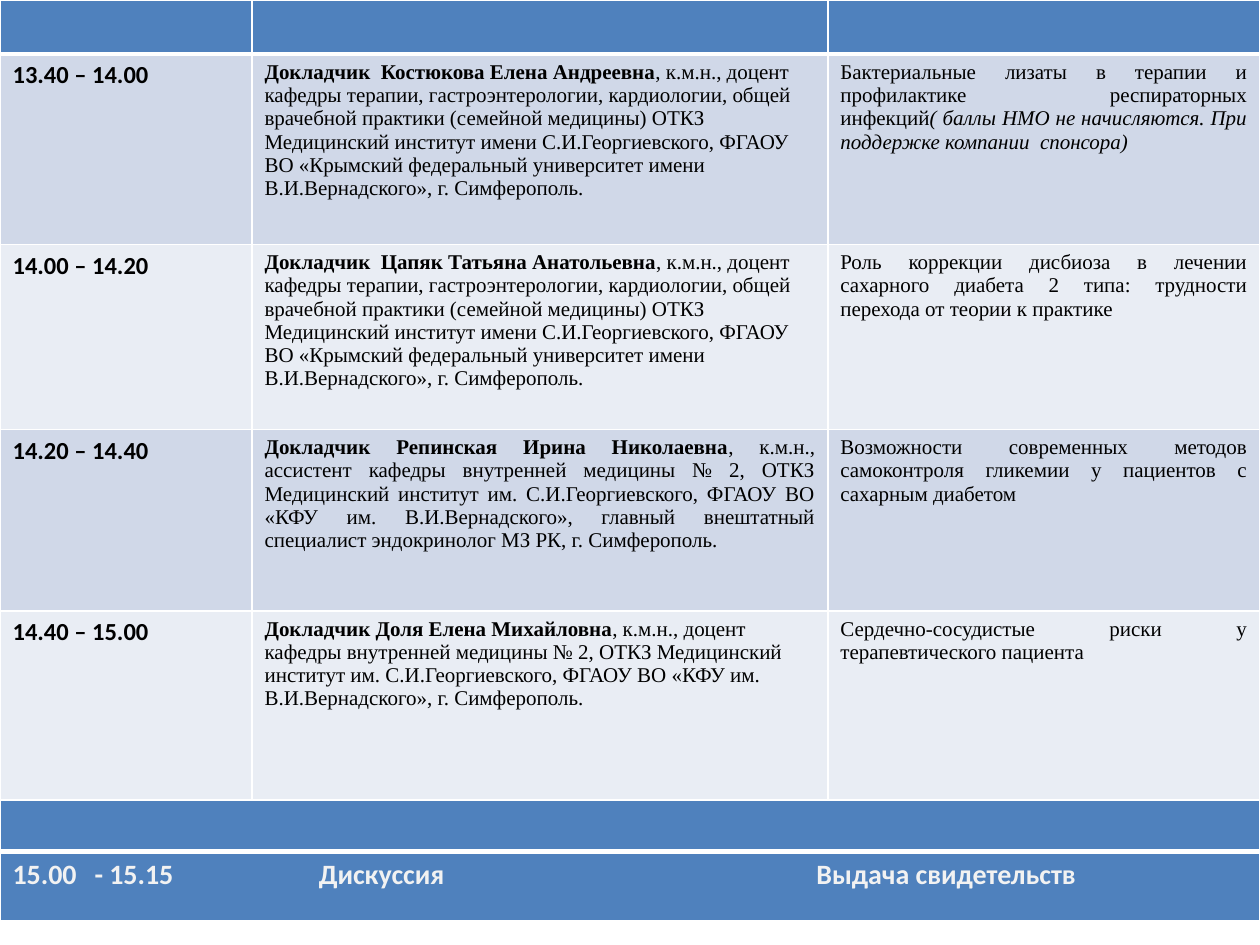
from lxml.etree import SubElement
from pptx import Presentation
from pptx.dml.color import RGBColor
from pptx.enum.text import PP_ALIGN
from pptx.oxml import parse_xml
from pptx.oxml.ns import nsdecls, qn
from pptx.util import Emu, Inches, Pt

BLUE = RGBColor(0x4F, 0x81, 0xBD)
BAND_DARK = RGBColor(0xD0, 0xD8, 0xE8)
BAND_LIGHT = RGBColor(0xE9, 0xED, 0xF4)
BLACK = RGBColor(0, 0, 0)
WHITE = RGBColor(0xFF, 0xFF, 0xFF)
PALE = RGBColor(0xF2, 0xF2, 0xF2)

HEADING_FONT = "Calibri"
TEXT_FONT = "Times New Roman"
COLUMN_SHARES = (0.2, 0.457, 0.343)
PROGRAMME_ROWS = (0.43, 1.51, 1.47, 1.44, 2.23)
CLOSING_ROWS = (0.4, 0.55)
CLOSING_TABS = (0.65, 2.43, 6.38)

THERAPY_POST = (
    ", к.м.н., доцент кафедры терапии, гастроэнтерологии, кардиологии, общей "
    "врачебной практики (семейной медицины) ОТКЗ Медицинский институт имени "
    "С.И.Георгиевского, ФГАОУ ВО «Крымский федеральный университет имени "
    "В.И.Вернадского», г. Симферополь."
)
INTERNAL_POST = (
    "кафедры внутренней медицины № 2, ОТКЗ Медицинский институт им. "
    "С.И.Георгиевского, ФГАОУ ВО «КФУ им. В.И.Вернадского»"
)
TALKS = (
    ("13.40 – 14.00", "Докладчик  Костюкова Елена Андреевна", THERAPY_POST, PP_ALIGN.LEFT,
     "Бактериальные лизаты в терапии и профилактике респираторных инфекций",
     "( баллы НМО не начисляются. При поддержке компании  спонсора)"),
    ("14.00 – 14.20", "Докладчик  Цапяк Татьяна Анатольевна", THERAPY_POST, PP_ALIGN.LEFT,
     "Роль коррекции дисбиоза в лечении сахарного диабета 2 типа: "
     "трудности перехода от теории к практике", ""),
    ("14.20 – 14.40", "Докладчик Репинская Ирина Николаевна",
     f", к.м.н., ассистент {INTERNAL_POST}, главный внештатный специалист "
     "эндокринолог МЗ РК, г. Симферополь.", PP_ALIGN.JUSTIFY,
     "Возможности современных методов самоконтроля гликемии у пациентов "
     "с сахарным диабетом", ""),
    ("14.40 – 15.00", "Докладчик Доля Елена Михайловна",
     f", к.м.н., доцент {INTERNAL_POST}, г. Симферополь.", PP_ALIGN.LEFT,
     "Сердечно-сосудистые риски у терапевтического пациента", ""),
)


def paint_cell(cell, colour, bottom=1):
    cell.fill.solid()
    cell.fill.fore_color.rgb = colour
    for index, (side, points) in enumerate(zip("LRTB", (1, 1, 1, bottom))):
        border = parse_xml(
            f'<a:ln{side} {nsdecls("a")} w="{Pt(points)}"><a:solidFill>'
            f'<a:srgbClr val="{WHITE}"/></a:solidFill></a:ln{side}>'
        )
        cell._tc.get_or_add_tcPr().insert(index, border)


def write_cell(cell, runs, font, size, colour, align=PP_ALIGN.LEFT):
    paragraph = cell.text_frame.paragraphs[0]
    paragraph.alignment = align
    paragraph.font.name = font
    paragraph.font.size = Pt(size)
    paragraph.font.color.rgb = colour
    for text, bold, italic in runs:
        run = paragraph.add_run()
        run.text = text
        run.font.bold = bold
        run.font.italic = italic
    return paragraph


def add_grid(slide, box, column_shares, row_heights):
    left, top, width = box
    table = slide.shapes.add_table(
        len(row_heights), len(column_shares), left, top, width, Inches(sum(row_heights))
    ).table
    table.first_row = False
    table.horz_banding = False
    for column, share in zip(table.columns, column_shares):
        column.width = Emu(round(width * share))
    for row, height in zip(table.rows, row_heights):
        row.height = Inches(height)
    return table


def add_programme(slide, box):
    programme = add_grid(slide, box, COLUMN_SHARES, PROGRAMME_ROWS)
    for cell in programme.rows[0].cells:
        paint_cell(cell, BLUE, bottom=3)
    for index, (time, speaker, post, align, topic, remark) in enumerate(TALKS):
        cells = list(programme.rows[index + 1].cells)
        for cell in cells:
            paint_cell(cell, BAND_LIGHT if index % 2 else BAND_DARK)
        topic_runs = [(topic, False, False)]
        if remark:
            topic_runs.append((remark, False, True))
        write_cell(cells[0], [(time, True, False)], HEADING_FONT, 14, BLACK)
        write_cell(cells[1], [(speaker, True, False), (post, False, False)],
                   TEXT_FONT, 12, BLACK, align)
        write_cell(cells[2], topic_runs, TEXT_FONT, 12, BLACK, PP_ALIGN.JUSTIFY)


def add_closing(slide, box):
    closing = add_grid(slide, box, (1,), CLOSING_ROWS)
    paint_cell(closing.cell(0, 0), BLUE, bottom=3)
    paint_cell(closing.cell(1, 0), BLUE)
    agenda = write_cell(
        closing.cell(1, 0), [("15.00\t- 15.15\tДискуссия\tВыдача свидетельств", True, False)],
        HEADING_FONT, 16, PALE,
    )
    properties = agenda._p.get_or_add_pPr()
    tabs = SubElement(properties, qn("a:tabLst"))
    for position in CLOSING_TABS:
        SubElement(tabs, qn("a:tab"), pos=str(Inches(position)), algn="l")
    properties.find(qn("a:defRPr")).addprevious(tabs)


def main():
    presentation = Presentation()
    presentation.slide_width = Inches(10)
    presentation.slide_height = Inches(7.5)
    slide = presentation.slides.add_slide(presentation.slide_layouts[6])
    width = presentation.slide_width
    add_programme(slide, (0, 0, width))
    add_closing(slide, (0, Inches(6.35), width))
    presentation.save("out.pptx")


if __name__ == "__main__":
    main()
